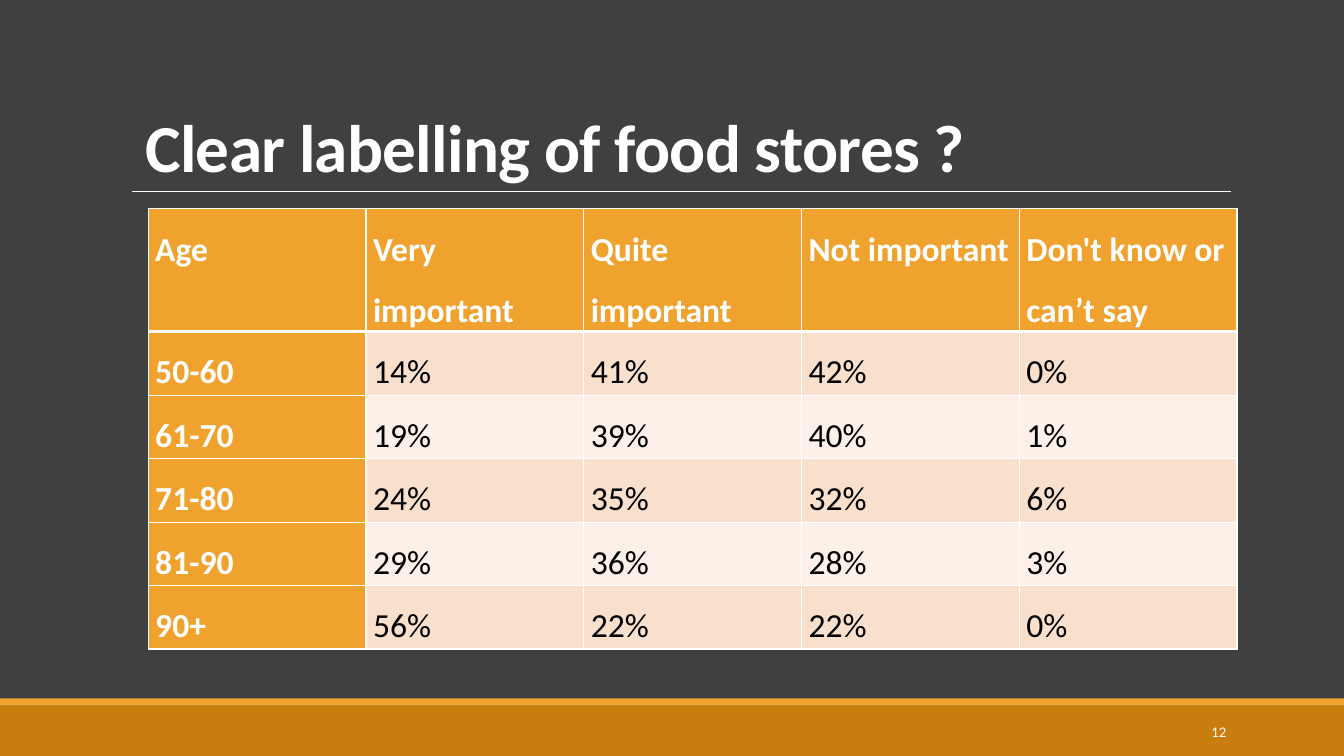
"""Build a slide with a table of how each age group rates clear labelling in food stores."""
from lxml import etree
from pptx import Presentation
from pptx.dml.color import RGBColor
from pptx.enum.shapes import MSO_CONNECTOR, MSO_SHAPE
from pptx.enum.text import MSO_ANCHOR, PP_ALIGN
from pptx.oxml.ns import qn
from pptx.util import Inches, Pt

RECT, LINE = MSO_SHAPE.RECTANGLE, MSO_CONNECTOR.STRAIGHT
LOW, MID, TOP = MSO_ANCHOR.BOTTOM, MSO_ANCHOR.MIDDLE, MSO_ANCHOR.TOP
LEFT, RIGHT = PP_ALIGN.LEFT, PP_ALIGN.RIGHT

THEME = {
    "back": "404040", "gold": "F0A22E", "dark": "C87D0E",
    "white": "FFFFFF", "black": "000000", "bands": ("F9E0CD", "FCF0E8"),
    "font": "Calibri", "title": 48, "body": 24, "small": 10.5,
}
WIDE, HIGH = 13.33, 7.5
ROWS = [
    ("Age", "Very important", "Quite important", "Not important", "Don't know or can’t say"),
    ("50-60", "14%", "41%", "42%", "0%"),
    ("61-70", "19%", "39%", "40%", "1%"),
    ("71-80", "24%", "35%", "32%", "6%"),
    ("81-90", "29%", "36%", "28%", "3%"),
    ("90+", "56%", "22%", "22%", "0%"),
]
COL, ROW, HEAD = 2.16, 0.63, 1.22


def paint(fill, tone):
    fill.solid()
    fill.fore_color.rgb = RGBColor.from_string(THEME[tone] if tone in THEME else tone)


def write(frame, text, size, tone, bold, look, para):
    frame.text = text
    first = frame.paragraphs[0]
    run = first.runs[0]
    font = {"name": THEME["font"], "size": Pt(THEME[size]), "bold": bold}
    for part, form in ((frame, look), (first, para), (run.font, font)):
        for key, value in form.items():
            setattr(part, key, value)
    paint(run.font.fill, tone)
    return run


deck = Presentation()
deck.slide_width, deck.slide_height = Inches(WIDE), Inches(HIGH)
slide = deck.slides.add_slide(deck.slide_layouts[6])
paint(slide.background.fill, "back")
shapes = slide.shapes

for top, tall, tone in ((7, 0.5, "dark"), (6.93, 0.07, "gold")):
    bar = shapes.add_shape(RECT, 0, Inches(top), deck.slide_width, Inches(tall))
    bar.shadow.inherit = False
    bar.line.fill.background()
    paint(bar.fill, tone)

rule = shapes.add_connector(LINE, Inches(1.31), Inches(1.9), Inches(12.21), Inches(1.9))
rule.line.width = Pt(0.5)
paint(rule.line.fill, "white")
etree.SubElement(rule.element.spPr, qn("a:effectLst"))

title = shapes.add_textbox(Inches(1.2), Inches(0.31), Inches(11), Inches(1.59))
run = write(title.text_frame, " Clear labelling of food stores ?", "title", "white", True,
            {"word_wrap": True, "vertical_anchor": LOW},
            {"alignment": LEFT, "line_spacing": 0.85})
run.font.fill
run.font._element.set("spc", "-50")

grid = shapes.add_table(len(ROWS), len(ROWS[0]), Inches(1.47), Inches(2.07),
                        Inches(COL * len(ROWS[0])),
                        Inches(HEAD + ROW * (len(ROWS) - 1))).table
for col in grid.columns:
    col.width = Inches(COL)
for r, line in enumerate(ROWS):
    grid.rows[r].height = Inches(ROW if r else HEAD)
    for c, text in enumerate(line):
        cell = grid.cell(r, c)
        side = r == 0 or c == 0
        edges = {"lnL": 1, "lnR": 1, "lnT": 3 if r == 1 else 1, "lnB": 1 if r else 3}
        props = cell._tc.get_or_add_tcPr()
        for tag, size in edges.items():
            edge = etree.SubElement(props, qn("a:" + tag), w=str(Pt(size)))
            solid = etree.SubElement(edge, qn("a:solidFill"))
            etree.SubElement(solid, qn("a:srgbClr"), val=THEME["white"])
        paint(cell.fill, "gold" if side else THEME["bands"][(r - 1) % 2])
        write(cell.text_frame, text, "body", "white" if side else "black", side,
              {}, {"alignment": LEFT, "line_spacing": 1.5})
        form = {"margin_left": Inches(0.07), "margin_right": Inches(0.07),
                "margin_top": 0, "margin_bottom": 0, "vertical_anchor": TOP}
        for key, value in form.items():
            setattr(cell, key, value)

page = shapes.add_textbox(Inches(10.83), Inches(7.06), Inches(1.43), Inches(0.4))
write(page.text_frame, "12", "small", "white", False,
      {"word_wrap": True, "vertical_anchor": MID}, {"alignment": RIGHT})

deck.save("out.pptx")
